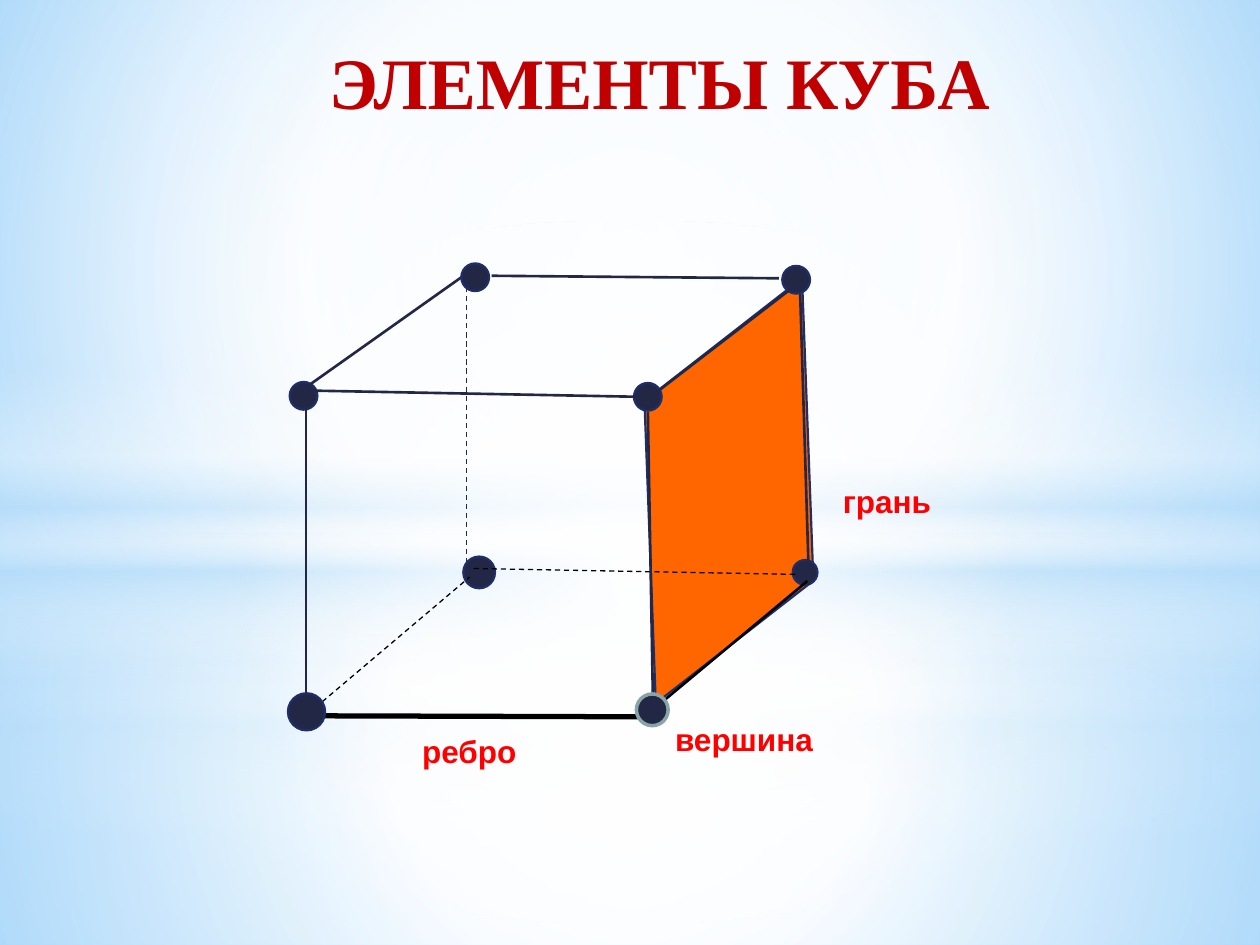
"""Build a slide that names the elements of a cube: edge, vertex and face."""
from pptx import Presentation
from pptx.dml.color import RGBColor
from pptx.enum.dml import MSO_LINE
from pptx.enum.shapes import MSO_CONNECTOR, MSO_SHAPE
from pptx.enum.text import MSO_ANCHOR, MSO_AUTO_SIZE, PP_ALIGN
from pptx.oxml import parse_xml
from pptx.oxml.ns import nsdecls, qn
from pptx.oxml.xmlchemy import OxmlElement
from pptx.util import Cm, Pt

COLORS = {
    "navy": "212745", "outline": "1F2E69", "halo": "89A4A7", "black": "000000",
    "face": "FF6600", "label": "FF0000", "title": "C00000",
    "white": "FFFFFF", "mist": "B4DCFA", "sky": "9ED5FF", "deep sky": "5BB9FF",
}
RGB = {name: RGBColor.from_string(value) for name, value in COLORS.items()}
CENTER = (50, 50, 50, 50)


def set_gradient(holder, stops, focus=None):
    """Fill with (position, colour, opacity) stops, round a focus or downwards."""
    marks = "".join(
        f'<a:gs pos="{position * 1000}"><a:srgbClr val="{COLORS[color]}">'
        f'<a:alpha val="{opacity * 1000}"/></a:srgbClr></a:gs>'
        for position, color, opacity in stops)
    course = '<a:lin ang="5400000" scaled="0"/>'
    if focus:
        sides = " ".join(f'{side}="{share * 1000}"' for side, share in zip("ltrb", focus))
        course = f'<a:path path="circle"><a:fillToRect {sides}/></a:path>'
    gradient = parse_xml(
        f'<a:gradFill {nsdecls("a")} rotWithShape="1"><a:gsLst>{marks}</a:gsLst>{course}</a:gradFill>')
    holder.replace(holder.find(qn("a:gradFill")), gradient)


def add_vertex(x, y, size, line="outline", weight=1.25):
    """Draw a vertex centred on a point in centimetres."""
    dot = page.shapes.add_shape(
        MSO_SHAPE.OVAL, Cm(x - size / 2), Cm(y - size / 2), Cm(size), Cm(size))
    dot.shadow.inherit = False
    dot.fill.solid()
    dot.fill.fore_color.rgb = RGB["navy"]
    dot.line.color.rgb = RGB[line]
    dot.line.width = Pt(weight)


deck = Presentation()
deck.slide_width, deck.slide_height = Cm(25.4), Cm(19.05)
page = deck.slides.add_slide(deck.slide_layouts[5])

page.background.fill.gradient()
set_gradient(page.element.find(f".//{qn('p:bgPr')}"),
             [(0, "sky", 100), (60, "white", 100), (100, "deep sky", 100)], (20, 10, 20, 60))

band = [(0, "white", 0), (29, "white", 30), (45, "mist", 40),
        (55, "white", 26), (65, "mist", 60), (100, "white", 0)]
for horizon, band_top, extra, glow_end in [(14.17, 10.46, 0, 56), (10.74, 7.37, 1, 54)]:
    floor = [(0, "white", 91 + extra), (37, "white", 76 + extra), (100, "mist", 79 + extra)]
    wall = [(0, "white", 89 + extra), (48, "white", 62 + extra), (100, "mist", 79 + extra)]
    glow = [(0, "white", 100), (glow_end, "white", 0)]
    for kind, top, height, stops, focus in [
        (MSO_SHAPE.RECTANGLE, horizon, 19.05 - horizon, floor, CENTER),
        (MSO_SHAPE.RECTANGLE, 0, horizon, wall, CENTER),
        (MSO_SHAPE.RECTANGLE, band_top, 6.35, band, None),
        (MSO_SHAPE.OVAL, 4.44, 14.17, glow, CENTER),
    ]:
        layer = page.shapes.add_shape(kind, 0, Cm(top), deck.slide_width, Cm(height))
        layer.shadow.inherit = False
        layer.line.fill.background()
        layer.fill.gradient()
        set_gradient(layer.element.spPr, stops, focus)

title = page.shapes.title
title.element.getparent().append(title.element)
title.left, title.top, title.width, title.height = Cm(1.24), Cm(0), Cm(23.6), Cm(4.32)
frame = title.text_frame
frame.text = "ЭЛЕМЕНТЫ КУБА"
frame.auto_size = MSO_AUTO_SIZE.NONE
frame.vertical_anchor = MSO_ANCHOR.BOTTOM
frame.margin_bottom = Cm(1.81)
para = frame.paragraphs[0]
para.alignment = PP_ALIGN.CENTER
para._p.get_or_add_pPr().set("marL", str(Cm(0.51)))
title_format = {"name": "Times New Roman", "size": Pt(41.4), "bold": True}
for key, value in title_format.items():
    setattr(para.runs[0].font, key, value)
para.runs[0].font.color.rgb = RGB["title"]

face = page.shapes.add_shape(MSO_SHAPE.PARALLELOGRAM, Cm(10.9), Cm(7.42), Cm(7.59), Cm(4.95))
face.adjustments[0] = 0.72
face.rotation = 322.1
face.shadow.inherit = False
face.fill.solid()
face.fill.fore_color.rgb = RGB["face"]
face.line.color.rgb = RGB["outline"]
face.line.width = Pt(1.25)

for vertex in [(9.66, 11.54, 0.64), (16.23, 11.54, 0.5), (16.05, 5.64, 0.56),
               (13.06, 8, 0.56), (6.12, 7.98, 0.56)]:
    add_vertex(*vertex)

edges = [
    (6.4, 14.43, 13.03, 14.45, "black", 3, False),
    (6.22, 14.38, 9.47, 11.63, "black", 0.75, True),
    (12.93, 14.5, 16.28, 11.71, "black", 1.5, False),
    (9.55, 11.46, 16.1, 11.58, "black", 0.75, True),
    (6.17, 13.97, 6.17, 7.87, "navy", 1.5, False),
    (13.16, 14, 13.06, 8.31, "navy", 1.5, False),
    (6.05, 7.87, 12.93, 8, "navy", 1.5, False),
    (6.25, 7.75, 9.3, 5.59, "navy", 1.5, False),
    (13.18, 7.95, 16.08, 5.72, "navy", 1.5, False),
    (9.91, 5.56, 15.7, 5.61, "navy", 1.5, False),
    (16.13, 5.92, 16.31, 11.79, "navy", 1.5, False),
    (9.4, 5.79, 9.4, 11.73, "navy", 0.75, True),
]
for *ends, color, weight, hidden in edges:
    edge = page.shapes.add_connector(MSO_CONNECTOR.STRAIGHT, *map(Cm, ends))
    edge.line.color.rgb = RGB[color]
    edge.line.width = Pt(weight)
    if hidden:
        edge.line.dash_style = MSO_LINE.DASH
    edge.element.spPr.append(OxmlElement("a:effectLst"))

add_vertex(6.18, 14.35, 0.75)
add_vertex(13.15, 14.31, 0.64, "halo", 2)
add_vertex(9.58, 5.59, 0.56)

label_format = {"name": "Arial", "size": Pt(18), "bold": True}
for text, left, top, width in [
    ("грань", 16.74, 9.6, 4.19), ("вершина", 13.36, 14.4, 4.19), ("ребро", 8.26, 14.63, 2.59),
]:
    box = page.shapes.add_textbox(Cm(left), Cm(top), Cm(width), Cm(1.02))
    box.text_frame.word_wrap = True
    box.text_frame.auto_size = MSO_AUTO_SIZE.SHAPE_TO_FIT_TEXT
    span = box.text_frame.paragraphs[0].add_run()
    span.text = text
    for key, value in label_format.items():
        setattr(span.font, key, value)
    span.font.color.rgb = RGB["label"]

deck.save("out.pptx")
